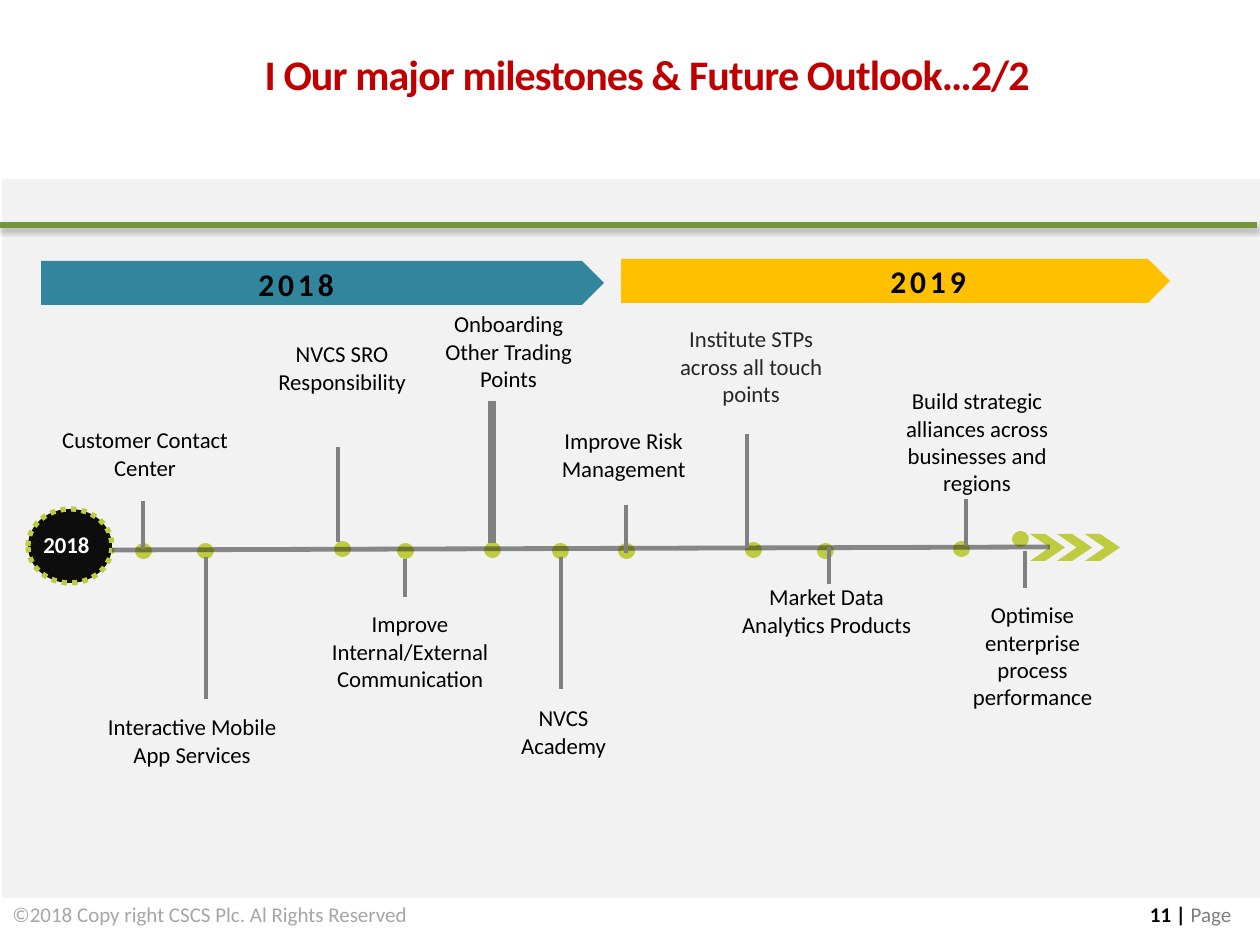
import pptx
import pptx.util
import pptx.dml.color
import pptx.enum.dml
import pptx.enum.shapes
import pptx.enum.text
import pptx.oxml
import pptx.oxml.ns
import lxml.etree

RGBColor = pptx.dml.color.RGBColor
SHAPE = pptx.enum.shapes.MSO_SHAPE
ALIGN = pptx.enum.text.PP_ALIGN
ANCHOR = pptx.enum.text.MSO_ANCHOR
qn = pptx.oxml.ns.qn
PX = pptx.util.Inches(1) / 126

BLACK = RGBColor(0x00, 0x00, 0x00)
WHITE = RGBColor(0xFF, 0xFF, 0xFF)
RED = RGBColor(0xC0, 0x00, 0x00)
PANEL = RGBColor(0xF2, 0xF2, 0xF2)
GREEN = RGBColor(0x77, 0x93, 0x3C)
LIME = RGBColor(0xBF, 0xCC, 0x40)
TEAL = RGBColor(0x31, 0x85, 0x9C)
AMBER = RGBColor(0xFF, 0xC0, 0x00)
CHARCOAL = RGBColor(0x26, 0x26, 0x26)
NIGHT = RGBColor(0x0D, 0x0D, 0x0D)
STEM_GRAY = RGBColor(0x80, 0x80, 0x80)
PAGE_GRAY = RGBColor(0x7F, 0x7F, 0x7F)
FOOTER_GRAY = RGBColor(0xA6, 0xA6, 0xA6)


def px(*lengths):
    return [pptx.util.Emu(round(length * PX)) for length in lengths]


def add_run(paragraph, text, size, color, bold=False, spacing=0):
    run = paragraph.add_run()
    run.text = text
    run.font.name = "Calibri"
    run.font.size = pptx.util.Pt(size)
    run.font.bold = bold
    run.font.color.rgb = color
    if spacing:
        run._r.get_or_add_rPr().set("spc", str(spacing))


presentation = pptx.Presentation()
presentation.slide_width, presentation.slide_height = px(1260, 945)
slide = presentation.slides.add_slide(presentation.slide_layouts[5])
shapes = slide.shapes

title = shapes.title
title.left, title.top, title.width, title.height = px(252, 42, 868, 63)
title.text_frame.vertical_anchor = ANCHOR.TOP
title.text_frame.auto_size = pptx.enum.text.MSO_AUTO_SIZE.NONE
paragraph = title.text_frame.paragraphs[0]
paragraph.alignment = ALIGN.LEFT
add_run(paragraph, "I Our major milestones & Future Outlook…2/2", 24, RED, True, -50)

DOTS = [(143, 551), (205, 551), (342, 549), (405, 551), (492, 550), (560, 551),
        (626, 551), (753, 550), (825, 551), (961, 549), (1020, 539)]
blocks = [
    (SHAPE.RECTANGLE, 2, 179, 1258, 719, PANEL),
    (SHAPE.PENTAGON, 621, 259, 549, 44, AMBER),
    (SHAPE.PENTAGON, 41, 261, 563, 44, TEAL),
]
blocks += [(SHAPE.CHEVRON, left, 534, 35, 27, LIME) for left in (1030, 1057, 1085)]
for preset, left, top, width, height, color in blocks:
    block = shapes.add_shape(preset, *px(left, top, width, height))
    block.shadow.inherit = False
    block.fill.solid()
    block.fill.fore_color.rgb = color
    block.line.fill.background()
    if preset == SHAPE.CHEVRON:
        block.adjustments[0] = 0.73

circles = [(x - 4, y - 4, 9, 8, LIME, 4.5) for x, y in DOTS]
circles.append((28, 509, 84, 74, NIGHT, 3))
for left, top, width, height, color, weight in circles:
    circle = shapes.add_shape(SHAPE.OVAL, *px(left, top, width, height))
    circle.shadow.inherit = False
    circle.fill.solid()
    circle.fill.fore_color.rgb = color
    circle.line.color.rgb = LIME
    circle.line.width = pptx.util.Pt(weight)
circle.line.dash_style = pptx.enum.dml.MSO_LINE.ROUND_DOT

STEMS = [(143, 501, 549), (206, 557, 699), (338, 447, 542), (405, 559, 597),
         (492, 401, 543), (561, 557, 689), (626, 505, 553), (747, 434, 548),
         (829, 547, 584), (966, 499, 546), (1025, 551, 588)]
lines = [(0, 225, 1257, 225, GREEN, 3), (112, 550, 1050, 547, CHARCOAL, 2.75)]
lines += [(x, top, x, bottom, STEM_GRAY, 5 if x == 492 else 2) for x, top, bottom in STEMS]
for x1, y1, x2, y2, color, weight in lines:
    line = shapes.add_connector(pptx.enum.shapes.MSO_CONNECTOR.STRAIGHT, *px(x1, y1, x2, y2))
    line.line.color.rgb = color
    line.line.width = pptx.util.Pt(weight)
    properties = line._element.spPr
    effects = lxml.etree.SubElement(properties, qn("a:effectLst"))
    if color == GREEN:
        shadow = lxml.etree.SubElement(effects, qn("a:outerShdw"), blurRad="39370",
                                       dist="22860", dir="5400000", rotWithShape="0")
        shade = lxml.etree.SubElement(shadow, qn("a:srgbClr"), val="000000")
        lxml.etree.SubElement(shade, qn("a:alpha"), val="35000")
    if color == CHARCOAL:
        tint = properties.find(".//" + qn("a:srgbClr"))
        lxml.etree.SubElement(tint, qn("a:alpha"), val="52000")

LABELS = [
    (31, 420, 228, 68, "Customer Contact Center"),
    (86, 707, 212, 68, "Interactive Mobile App Services"),
    (248, 334, 188, 68, "NVCS SRO Responsibility"),
    (305, 604, 210, 96, "Improve Internal/External Communication"),
    (416, 304, 185, 96, "Onboarding Other Trading Points"),
    (489, 698, 149, 68, "NVCS Academy"),
    (527, 421, 193, 68, "Improve Risk Management"),
    (667, 319, 168, 96, "Institute STPs across all touch points"),
    (718, 577, 217, 68, "Market Data Analytics Products"),
    (872, 381, 210, 123, "Build strategic alliances across businesses and regions"),
    (945, 595, 175, 123, "Optimise enterprise process performance"),
]
texts = [(*label, 13, CHARCOAL if "STPs" in label[4] else BLACK, False, 0, ALIGN.CENTER)
         for label in LABELS]
texts += [
    (246, 262, 183, 44, "2018", 18, BLACK, True, 220, ALIGN.LEFT),
    (878, 259, 183, 44, "2019", 18, BLACK, True, 220, ALIGN.LEFT),
    (31, 525, 83, 40, "2018", 13, WHITE, True, 0, ALIGN.LEFT),
]
for left, top, width, height, text, size, color, bold, spacing, alignment in texts:
    box = shapes.add_textbox(*px(left, top, width, height))
    box.text_frame.word_wrap = True
    if spacing:
        box.text_frame.vertical_anchor = ANCHOR.MIDDLE
    paragraph = box.text_frame.paragraphs[0]
    paragraph.alignment = alignment
    add_run(paragraph, text, size, color, bold, spacing)

footer = shapes.add_textbox(*px(0, 895, 1260, 38))
footer.text_frame.word_wrap = True
paragraph = footer.text_frame.paragraphs[0]
tabs = lxml.etree.SubElement(paragraph._p.get_or_add_pPr(), qn("a:tabLst"))
lxml.etree.SubElement(tabs, qn("a:tab"), pos=str(px(1219)[0]), algn="r")
add_run(paragraph, "©2018 Copy right CSCS Plc. Al Rights Reserved\t", 12, FOOTER_GRAY)
add_run(paragraph, "11 | ", 12, BLACK, True)
add_run(paragraph, "Page", 12, PAGE_GRAY)

presentation.save("out.pptx")
